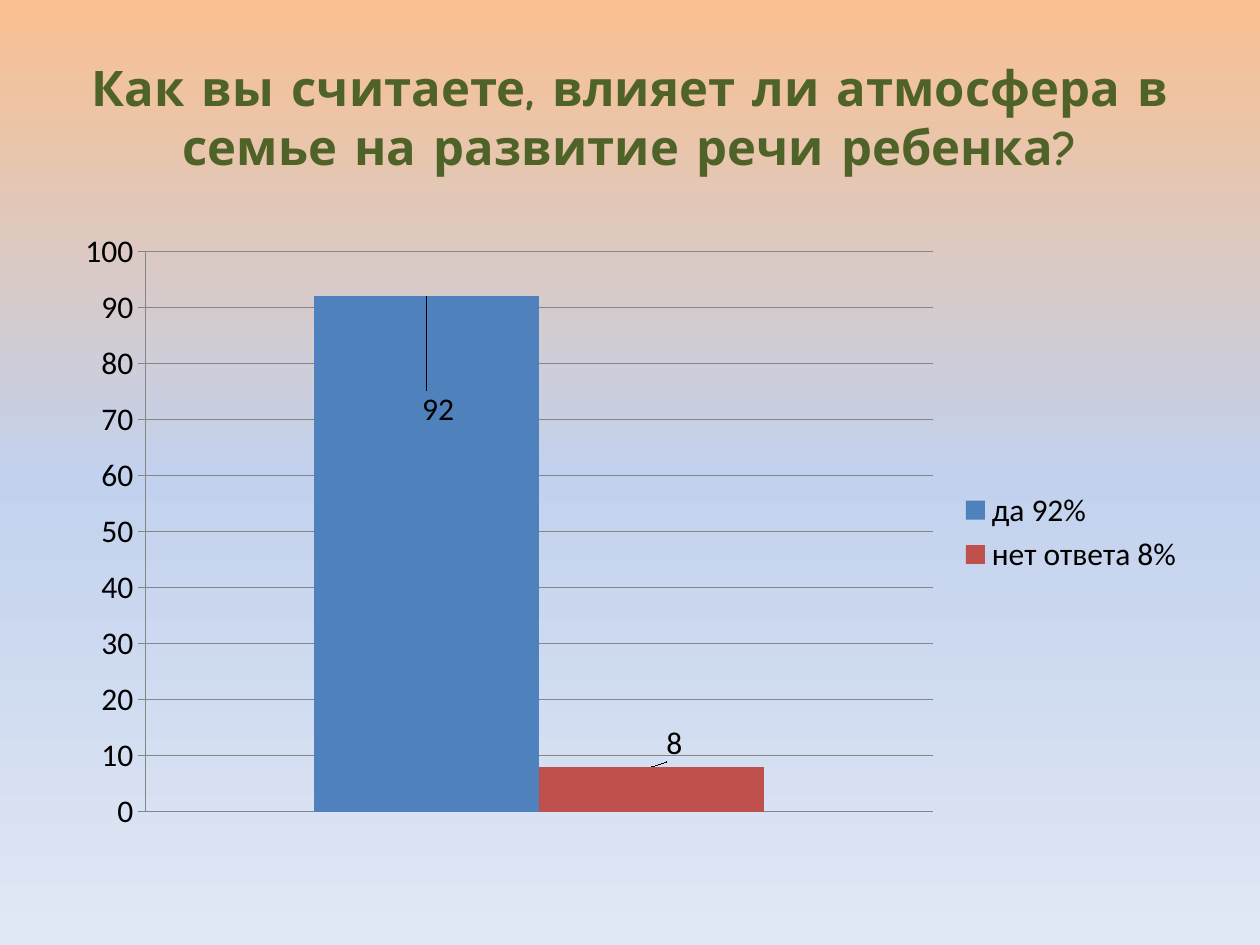
from copy import deepcopy

from lxml import etree
from pptx import Presentation
from pptx.chart.data import CategoryChartData
from pptx.dml.color import RGBColor
from pptx.enum.chart import (XL_CHART_TYPE, XL_LABEL_POSITION,
                             XL_LEGEND_POSITION, XL_TICK_MARK)
from pptx.enum.text import MSO_ANCHOR, PP_ALIGN
from pptx.oxml.ns import qn
from pptx.util import Inches, Pt

COLORS = {
    "peach": "FAC090", "sky": "C2D1ED", "pale": "E1E8F5",
    "title": "4F6228", "text": "000000", "line": "868686",
    "yes": "4F81BD", "no_answer": "C0504D",
}


def rgb(name):
    return RGBColor.from_string(COLORS[name])


def make_layout(inner=False, **values):
    """Manual chart layout, in fractions of the chart size."""
    layout = etree.Element(qn("c:layout"))
    manual = etree.SubElement(layout, qn("c:manualLayout"))
    if inner:
        for tag, val in (("layoutTarget", "inner"), ("xMode", "edge"), ("yMode", "edge")):
            etree.SubElement(manual, qn(f"c:{tag}")).set("val", val)
    for tag, val in values.items():
        etree.SubElement(manual, qn(f"c:{tag}")).set("val", str(val))
    return layout


class SlideBuilder:
    title_font = "Comic Neue"
    body_font = "Calibri"

    def __init__(self, slide):
        self.s = slide

    def background(self, *names):
        fill = self.s.background.fill
        fill.gradient()
        fill.gradient_angle = 270
        first = fill.gradient_stops[0]._gs
        first.addnext(deepcopy(first))
        for i, (stop, name) in enumerate(zip(fill.gradient_stops, names)):
            stop.color.rgb = rgb(name)
            stop.position = i / (len(names) - 1)

    def title(self, text, x, y, w, h):
        sp = self.s.shapes.add_textbox(Inches(x), Inches(y), Inches(w), Inches(h))
        tf = sp.text_frame
        tf.word_wrap = True
        tf.vertical_anchor = MSO_ANCHOR.MIDDLE
        p = tf.paragraphs[0]
        p.text = text
        p.alignment = PP_ALIGN.CENTER
        p.font.name, p.font.size, p.font.bold = self.title_font, Pt(28), True
        p.font.color.rgb = rgb("title")

    def column_chart(self, series, x, y, w, h):
        """Each series is (name, value, colour, label shift)."""
        data = CategoryChartData()
        data.categories = ["1"]
        for name, value, *_ in series:
            data.add_series(name, [value])
        chart = self.s.shapes.add_chart(
            XL_CHART_TYPE.COLUMN_CLUSTERED,
            Inches(x), Inches(y), Inches(w), Inches(h), data).chart
        chart.has_title = False
        chart.font.name, chart.font.size = self.body_font, Pt(18)
        chart.font.color.rgb = rgb("text")

        # Legend
        chart.has_legend = True
        chart.legend.position = XL_LEGEND_POSITION.RIGHT
        chart.legend.include_in_layout = False

        # Axes
        chart.category_axis.visible = False
        axis = chart.value_axis
        axis.minimum_scale, axis.maximum_scale, axis.major_unit = 0, 100, 10
        axis.major_tick_mark = XL_TICK_MARK.OUTSIDE
        axis.has_major_gridlines = True
        for line in (axis.format.line, axis.major_gridlines.format.line):
            line.color.rgb = rgb("line")
            line.width = Pt(0.75)

        # Columns and their shifted labels
        plot = chart.plots[0]
        plot.vary_by_categories = False
        plot.gap_width, plot.overlap = 150, 0
        for ser, (_, _, color, (dx, dy)) in zip(plot.series, series):
            ser.format.fill.solid()
            ser.format.fill.fore_color.rgb = rgb(color)
            ser.data_labels.show_value = True
            label = ser.points[0].data_label
            label.position = XL_LABEL_POSITION.OUTSIDE_END
            idx = ser.data_labels._element.find(f"{qn('c:dLbl')}/{qn('c:idx')}")
            idx.addnext(make_layout(x=dx, y=dy))

        # Plot area
        area = chart._chartSpace.chart.plotArea
        for old in area.findall(qn("c:layout")):
            area.remove(old)
        area.insert(0, make_layout(inner=True, x=0.073, y=0.05, w=0.694, h=0.898))


def main():
    prs = Presentation()
    prs.slide_width, prs.slide_height = Inches(10), Inches(7.5)
    b = SlideBuilder(prs.slides.add_slide(prs.slide_layouts[6]))
    b.background("peach", "sky", "pale")
    b.title("Как вы считаете, влияет ли атмосфера в семье на развитие речи ребенка?",
            0.5, 0.3, 9, 1.25)
    b.column_chart([("да 92%", 92, "yes", (0.01, 0.22)),
                    ("нет ответа 8%", 8, "no_answer", (0.02, 0))],
                   0.5, 1.75, 9, 4.95)
    prs.save("out.pptx")


if __name__ == "__main__":
    main()
